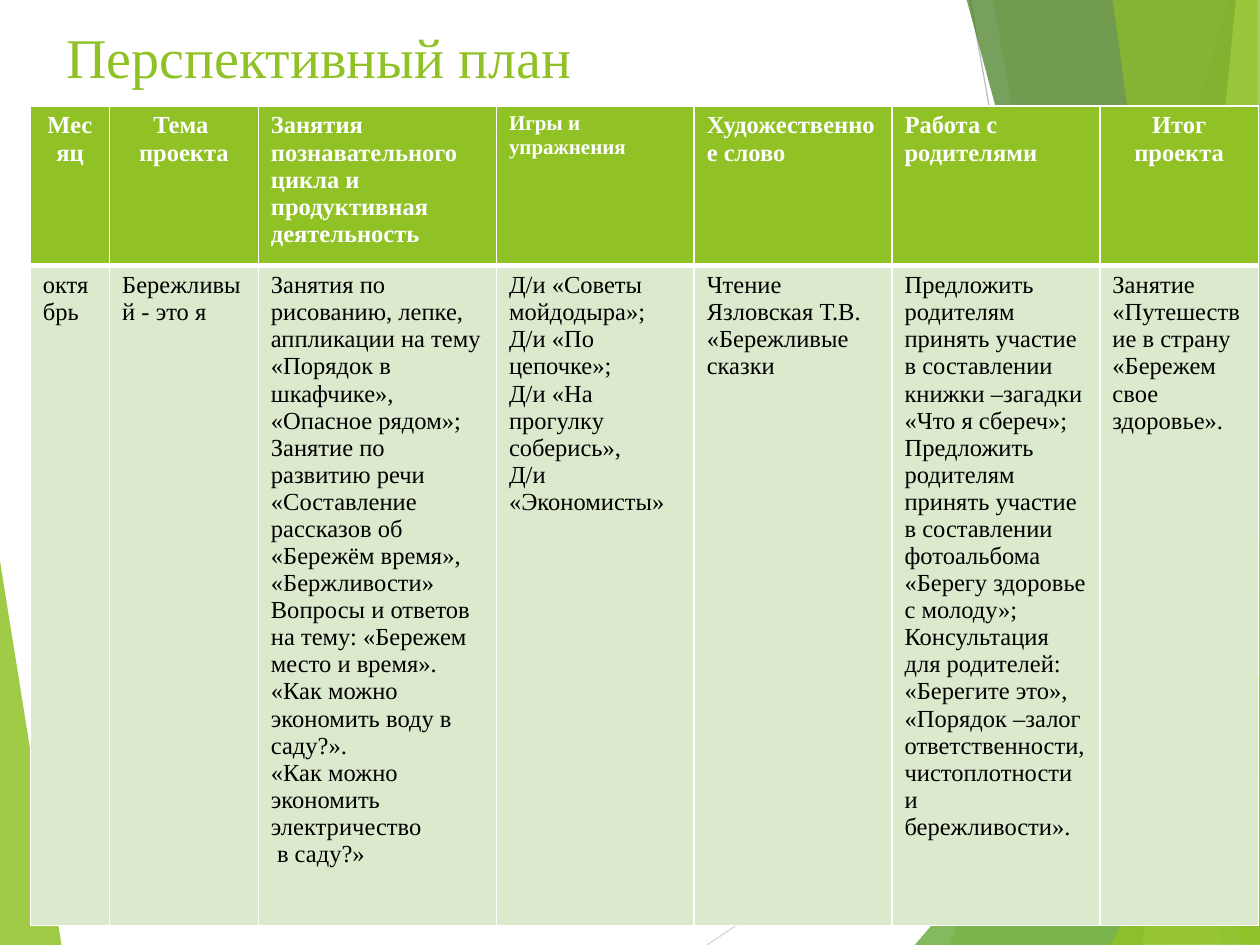
from lxml import etree
from pptx import Presentation
from pptx import util as u
from pptx.dml.color import RGBColor
from pptx.enum import shapes, text
from pptx.oxml.ns import qn

THEME = {
    "font": "Times New Roman",
    "accent": "90C226", "green": "54A021", "dark": "3F7819", "pale": "C0E474",
    "row": "DBE9CD", "white": "FFFFFF", "black": "000000",
    "title": 32, "body": 14, "small": 12,
}

TITLE = "Перспективный план"

# Heading paragraphs, alignment, type size, column width
CENTER, LEFT = text.PP_ALIGN.CENTER, text.PP_ALIGN.LEFT
COLUMNS = [
    (["Месяц"], CENTER, "body", 0.63),
    (["Тема ", "проекта"], CENTER, "body", 1.18),
    (["Занятия познавательного цикла и продуктивная деятельность"], LEFT, "body", 1.89),
    (["Игры и упражнения"], LEFT, "small", 1.57),
    (["Художественное слово"], LEFT, "body", 1.57),
    (["Работа с родителями"], LEFT, "body", 1.65),
    (["Итог проекта"], CENTER, "body", 1.26),
]
OCTOBER = [
    ["октябрь"],
    ["Бережливый - это я"],
    ["Занятия по рисованию, лепке, аппликации на тему «Порядок в шкафчике», "
     "«Опасное рядом»;",
     "Занятие по развитию речи «Составление рассказов об «Бережём время», "
     "«Бержливости» Вопросы и ответов на тему: «Бережем место и время». "
     "«Как можно экономить воду в саду?».",
     "«Как можно экономить электричество",
     " в саду?»"],
    ["Д/и «Советы мойдодыра»;\nД/и «По цепочке»;\nД/и «На прогулку соберись»,",
     "Д/и «Экономисты»"],
    ["Чтение Язловская Т.В. «Бережливые сказки"],
    ["Предложить родителям принять участие в составлении книжки –загадки "
     "«Что я сбереч»;",
     "Предложить родителям принять участие в составлении фотоальбома "
     "«Берегу здоровье с молоду»;",
     "Консультация для родителей: «Берегите это», «Порядок –залог "
     "ответственности, чистоплотности и бережливости»."],
    ["Занятие «Путешествие в страну «Бережем свое здоровье»."],
]
ROW_HEIGHTS = [1.21, 5.03]
TABLE_HEIGHT = 6.5

# Background: corner points, colour, opacity in percent
LEFT_WEDGE = ([(-0.01, 4.39), (0.49, 7.51), (-0.01, 7.5)], "accent", 85)
RIGHT_FACETS = [
    ([(9.75, 0), (7.54, 7.5), (10.02, 7.51), (10.01, 0.01)], "accent", 30),
    ([(7.88, -0.01), (9.19, 7.5), (10.01, 7.5), (10.01, -0.01)], "accent", 20),
    ([(7.26, 7.5), (10, 4.29), (10.01, 7.5)], "green", 72),
    ([(7.67, -0.01), (9.7, 7.5), (10.01, 7.49), (10.01, -0.01)], "dark", 70),
    ([(9.81, -0.01), (9.07, 7.5), (10.01, 7.5), (10, -0.01)], "pale", 70),
    ([(8.83, -0.01), (9.86, 7.5), (10, 7.5), (9.98, -0.01)], "accent", 65),
    ([(8.81, 7.5), (10.01, 5.35), (10.01, 7.49)], "accent", 80),
]
RAYS = [((5.61, 7.5), (10.01, 4.57), "D9D9D9"), ((7.7, 0), (9.04, 7.5), "BFBFBF")]


def color(name):
    return RGBColor.from_string(THEME.get(name, name))


def add_facet(page, points, fill, opacity):
    corners = [(u.Inches(x), u.Inches(y)) for x, y in points]
    builder = page.shapes.build_freeform(*corners[0])
    builder.add_line_segments(corners[1:], close=True)
    shape = builder.convert_to_shape()
    shape.shadow.inherit = False
    shape.fill.solid()
    shape.fill.fore_color.rgb = color(fill)
    shape.line.fill.background()
    tint = shape._element.spPr.find(qn("a:solidFill"))[0]
    etree.SubElement(tint, qn("a:alpha"), val=str(opacity * 1000))


def add_ray(page, start, end, stroke):
    ends = [u.Inches(value) for value in start + end]
    ray = page.shapes.add_connector(shapes.MSO_CONNECTOR.STRAIGHT, *ends)
    ray.line.color.rgb = color(stroke)
    ray.line.width = u.Pt(0.75)
    etree.SubElement(ray._element.spPr, qn("a:effectLst"))


def write(frame, paragraphs, size, ink, bold=False, align=LEFT):
    for index, content in enumerate(paragraphs):
        para = frame.add_paragraph() if index else frame.paragraphs[0]
        para.alignment = align
        for number, line in enumerate(content.split("\n")):
            if number:
                para.add_line_break()
            span = para.add_run()
            span.text = line
            span.font.name = THEME["font"]
            span.font.size = u.Pt(THEME[size])
            span.font.bold = bold
            span.font.color.rgb = color(ink)


def style_cell(cell, fill, edges):
    """Fill the cell and draw white edges; widths in points: left, right, top, bottom."""
    cell.fill.solid()
    cell.fill.fore_color.rgb = color(fill)
    props = cell._tc.get_or_add_tcPr()
    for index, (side, width) in enumerate(zip("LRTB", edges)):
        edge = etree.Element(qn(f"a:ln{side}"), w=str(u.Pt(width)))
        paint = etree.SubElement(edge, qn("a:solidFill"))
        etree.SubElement(paint, qn("a:srgbClr"), val=THEME["white"])
        props.insert(index, edge)


def add_plan(page):
    widths = [column[3] for column in COLUMNS]
    frame = page.shapes.add_table(
        2, len(COLUMNS), u.Inches(0.24), u.Inches(0.84),
        u.Inches(sum(widths)), u.Inches(TABLE_HEIGHT))
    table = frame.table
    for row, height in zip(table.rows, ROW_HEIGHTS):
        row.height = u.Inches(height)
    for index, (heading, align, size, width) in enumerate(COLUMNS):
        table.columns[index].width = u.Inches(width)
        head, body = table.cell(0, index), table.cell(1, index)
        style_cell(head, "accent", (1, 1, 1, 3))
        write(head.text_frame, heading, size, "white", True, align)
        style_cell(body, "row", (1, 1, 3, 1))
        write(body.text_frame, OCTOBER[index], "body", "black")
    frame.height = u.Inches(TABLE_HEIGHT)


def main():
    deck = Presentation()
    deck.slide_width, deck.slide_height = u.Inches(10), u.Inches(7.5)
    page = deck.slides.add_slide(deck.slide_layouts[6])

    # Background
    add_facet(page, *LEFT_WEDGE)
    for ray in RAYS:
        add_ray(page, *ray)
    for facet in RIGHT_FACETS:
        add_facet(page, *facet)

    # Title
    box = page.shapes.add_textbox(
        u.Inches(0.43), u.Inches(0.13), u.Inches(8.9), u.Inches(0.87))
    box.text_frame.word_wrap = True
    write(box.text_frame, [TITLE], "title", "accent")

    # Plan table
    add_plan(page)
    deck.save("out.pptx")


if __name__ == "__main__":
    main()
